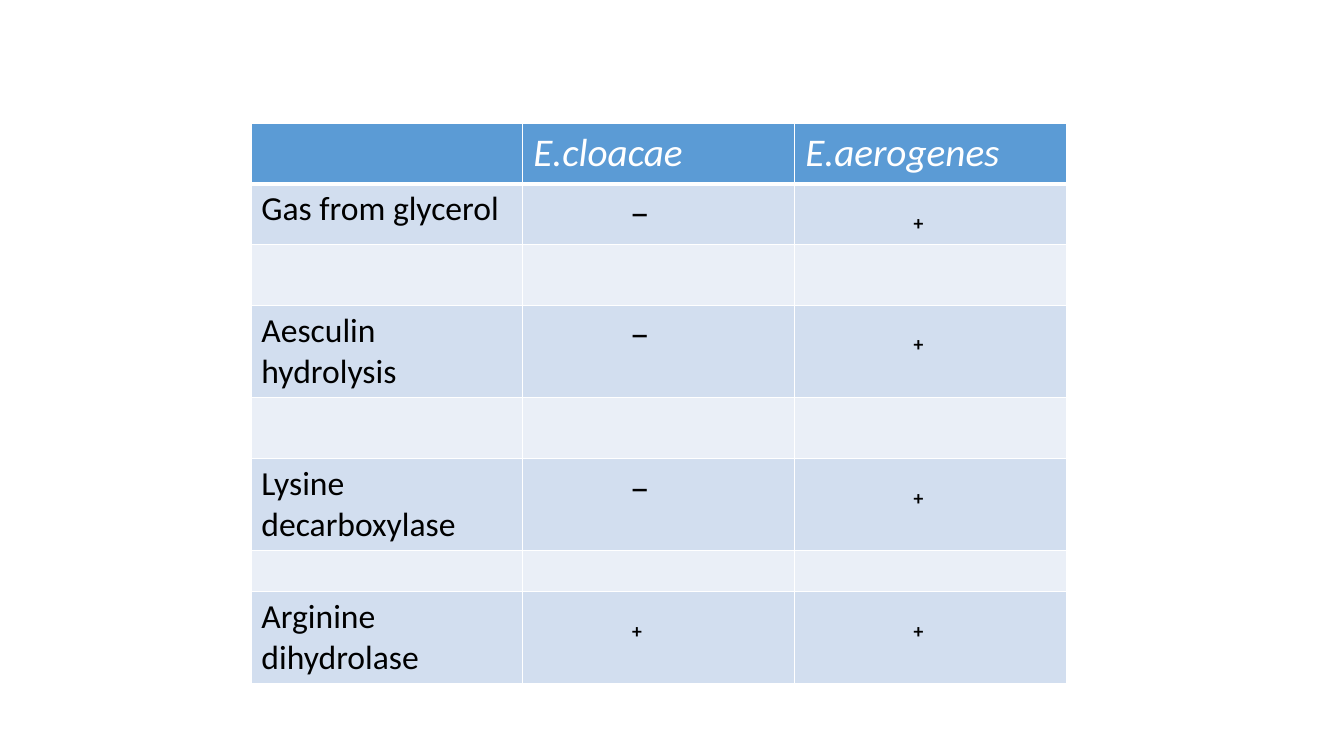
from typing import NamedTuple

from lxml import etree
from pptx import Presentation
from pptx.dml.color import RGBColor
from pptx.oxml.ns import qn
from pptx.util import Emu, Pt

EMU_PER_PX = 9525
FONT = "Calibri"
WHITE, BLACK = "FFFFFF", "000000"
HEADER_BLUE, BAND_DARK, BAND_LIGHT = "5B9BD5", "D2DEEF", "EAEFF7"

TABLE_LEFT, TABLE_TOP, COLUMN_WIDTH = 239, 118, 259
LABEL_INDENT = 10
RESULT_INDENTS = (LABEL_INDENT, 102, 111)


class TestRow(NamedTuple):
    height: int
    label: str = ""
    cloacae: str = ""
    aerogenes: str = ""


HEADER = TestRow(57, "", "E.cloacae", "E.aerogenes")
TESTS = (
    TestRow(58, "Gas from glycerol", "‒", "₊"),
    TestRow(58),
    TestRow(88, "Aesculin hydrolysis", "‒", "₊"),
    TestRow(58),
    TestRow(87, "Lysine decarboxylase", "‒", "₊"),
    TestRow(39),
    TestRow(87, "Arginine dihydrolase", "₊", "₊"),
)


def px(length: int) -> Emu:
    return Emu(length * EMU_PER_PX)


def rgb(colour: str) -> RGBColor:
    return RGBColor.from_string(colour)


def add_borders(cell, bottom_points: int) -> None:
    """Draw white rules on the four sides of a cell."""
    properties = cell._tc.get_or_add_tcPr()
    widths = {"a:lnL": 1, "a:lnR": 1, "a:lnT": 1, "a:lnB": bottom_points}
    for position, (tag, points) in enumerate(widths.items()):
        line = etree.Element(qn(tag), w=str(Pt(points)))
        fill = etree.SubElement(line, qn("a:solidFill"))
        etree.SubElement(fill, qn("a:srgbClr"), val=WHITE)
        properties.insert(position, line)


def style_cell(cell, text: str, fill: str, colour: str, size: int,
               indent: int = LABEL_INDENT, italic: bool = False,
               bottom_points: int = 1) -> None:
    cell.fill.solid()
    cell.fill.fore_color.rgb = rgb(fill)
    add_borders(cell, bottom_points)
    cell.margin_left = px(indent)
    if text:
        cell.text = text
        font = cell.text_frame.paragraphs[0].font
        font.name, font.size = FONT, Pt(size)
        font.bold, font.italic = False, italic
        font.color.rgb = rgb(colour)


def main() -> None:
    presentation = Presentation()
    presentation.slide_width, presentation.slide_height = px(1280), px(720)
    slide = presentation.slides.add_slide(presentation.slide_layouts[6])

    # Table grid
    rows = (HEADER, *TESTS)
    column_count = len(RESULT_INDENTS)
    comparison = slide.shapes.add_table(
        len(rows), column_count, px(TABLE_LEFT), px(TABLE_TOP),
        px(column_count * COLUMN_WIDTH), px(sum(row.height for row in rows)),
    ).table
    for column in comparison.columns:
        column.width = px(COLUMN_WIDTH)
    for grid_row, row in zip(comparison.rows, rows):
        grid_row.height = px(row.height)

    # Species names
    for column, species in enumerate(HEADER[1:]):
        style_cell(comparison.cell(0, column), species, HEADER_BLUE, WHITE, 28,
                   italic=True, bottom_points=3)

    # Test results in alternating bands
    for row_index, test in enumerate(TESTS, start=1):
        band = BAND_DARK if row_index % 2 else BAND_LIGHT
        for column, (text, indent) in enumerate(zip(test[1:], RESULT_INDENTS)):
            size = 28 if column else 24
            style_cell(comparison.cell(row_index, column), text, band, BLACK,
                       size, indent)

    presentation.save("out.pptx")


if __name__ == "__main__":
    main()
